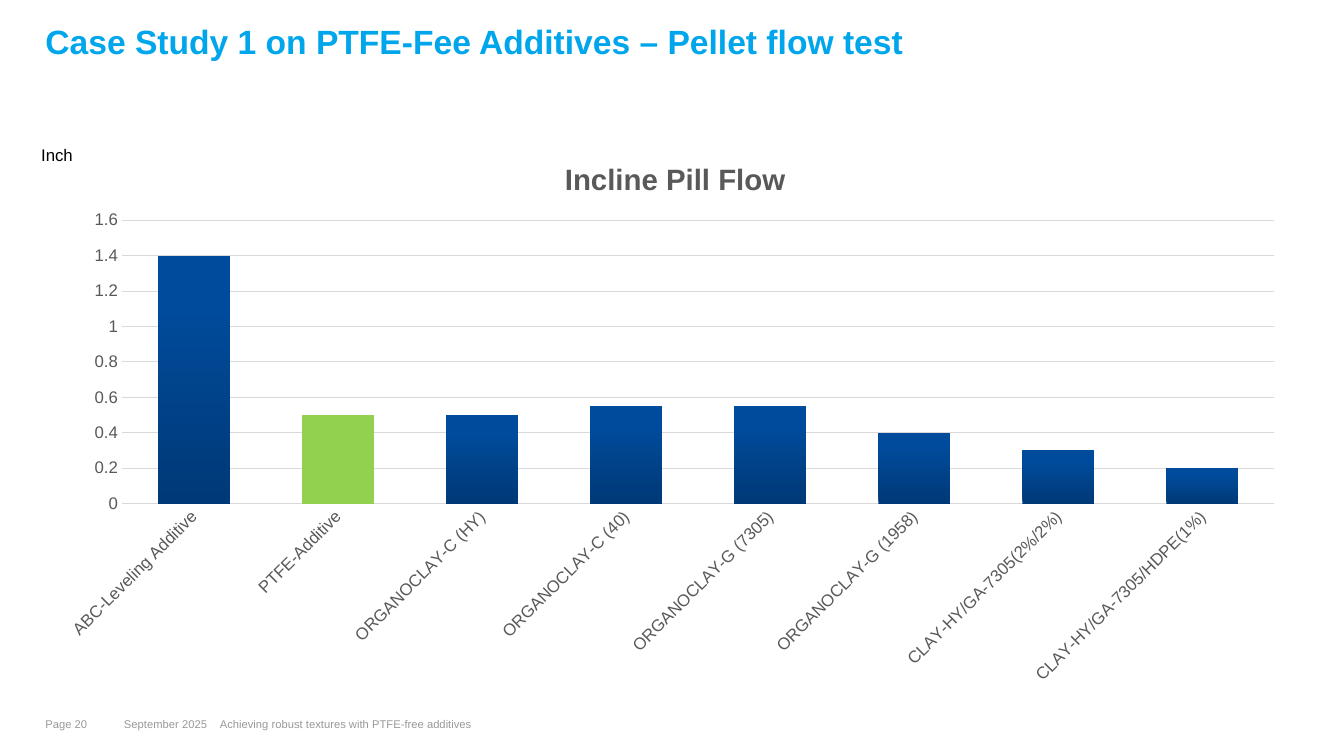
from dataclasses import dataclass

from lxml import etree
from pptx import Presentation
from pptx import util as u
from pptx.chart.data import CategoryChartData
from pptx.dml.color import RGBColor
from pptx.enum import chart as ch
from pptx.enum import text as tx
from pptx.oxml import parse_xml
from pptx.oxml.ns import nsdecls

FONT = "Arial"
BLUE, GRAY, GRID, FOOT = "00A6EB", "595959", "D9D9D9", "999999"
FLOW = {
    "ABC-Leveling Additive": 1.4,
    "PTFE-Additive": 0.5,
    "ORGANOCLAY-C (HY)": 0.5,
    "ORGANOCLAY-C (40)": 0.55,
    "ORGANOCLAY-G (7305)": 0.55,
    "ORGANOCLAY-G (1958)": 0.4,
    "CLAY-HY/GA-7305(2%/2%)": 0.3,
    "CLAY-HY/GA-7305/HDPE(1%)": 0.2,
}


@dataclass
class Label:
    text: str
    left: float
    top: float
    width: float
    height: float
    size: float = 8
    color: str = FOOT
    inset: tuple[float, float] = (0, 0)
    align: tx.PP_ALIGN = tx.PP_ALIGN.LEFT


LABELS = [
    Label("Page 20", 0.45, 7.12, 0.68, 0.16),
    Label("September 2025", 1.23, 7.12, 0.87, 0.16),
    Label("Achieving robust textures with PTFE-free additives", 2.18, 7.12, 8.98, 0.16),
    Label("Inch", 0.17, 1.39, 0.79, 0.3, 12, "000000", (0.1, 0.05), tx.PP_ALIGN.CENTER),
]


def rgb(code: str) -> RGBColor:
    return RGBColor.from_string(code)


def style(font, size: float, color: str, bold: bool = False) -> None:
    font.name, font.size, font.bold = FONT, u.Pt(size), bold
    font.color.rgb = rgb(color)


def place(sp, left: float, top: float, width: float, height: float) -> None:
    sp.left, sp.top = u.Inches(left), u.Inches(top)
    sp.width, sp.height = u.Inches(width), u.Inches(height)


def set_insets(tf, left: float, top: float, right: float, bottom: float) -> None:
    tf.margin_left, tf.margin_top = u.Inches(left), u.Inches(top)
    tf.margin_right, tf.margin_bottom = u.Inches(right), u.Inches(bottom)


def add_title(s, title: str) -> None:
    sp = s.shapes.title
    place(sp, 0.45, 0.21, 12.44, 0.89)
    tf = sp.text_frame
    tf.word_wrap, tf.auto_size = True, tx.MSO_AUTO_SIZE.NONE
    tf.vertical_anchor = tx.MSO_ANCHOR.TOP
    set_insets(tf, 0, 0.04, 0, 0)
    p = tf.paragraphs[0]
    p.alignment, p.line_spacing = tx.PP_ALIGN.LEFT, 0.9
    r = p.add_run()
    r.text = title
    style(r.font, 24, BLUE, True)


def add_label(s, label: Label) -> None:
    sp = s.shapes.add_textbox(0, 0, 0, 0)
    place(sp, label.left, label.top, label.width, label.height)
    tf = sp.text_frame
    tf.word_wrap = True
    side, end = label.inset
    set_insets(tf, side, end, side, end)
    p = tf.paragraphs[0]
    p.alignment = label.align
    r = p.add_run()
    r.text = label.text
    style(r.font, label.size, label.color)


def layout_xml(inner: bool = False, **fractions: float) -> etree.ElementBase:
    """Manual chart layout, in fractions of the chart's size."""
    target = '<c:layoutTarget val="inner"/>' if inner else ""
    modes = '<c:xMode val="edge"/><c:yMode val="edge"/>'
    sizes = "".join(f'<c:{k} val="{v}"/>' for k, v in fractions.items())
    return parse_xml(f'<c:layout {nsdecls("c")}><c:manualLayout>{target}{modes}{sizes}'
                     "</c:manualLayout></c:layout>")


def replace_layout(parent, layout, after: str | None = None) -> None:
    for old in parent.xpath("./c:layout"):
        parent.remove(old)
    if after:
        parent.xpath(f"./{after}")[0].addnext(layout)
    else:
        parent.insert(0, layout)


def add_flow_chart(s) -> None:
    data = CategoryChartData()
    data.categories = list(FLOW)
    data.add_series("Series 1", list(FLOW.values()))
    frame = s.shapes.add_chart(ch.XL_CHART_TYPE.COLUMN_CLUSTERED, u.Inches(0.45),
                               u.Inches(1.32), u.Inches(12.44), u.Inches(5.58), data)
    chart = frame.chart
    style(chart.font, 10, "000000")
    chart.has_legend = False

    # Chart title
    chart.has_title = True
    r = chart.chart_title.text_frame.paragraphs[0].add_run()
    r.text = "Incline Pill Flow"
    style(r.font, 21, GRAY, True)
    chart.chart_title.include_in_layout = False

    # Axes
    cat, val = chart.category_axis, chart.value_axis
    for axis in (cat, val):
        axis.major_tick_mark = axis.minor_tick_mark = ch.XL_TICK_MARK.NONE
        style(axis.tick_labels.font, 12, GRAY)
    cat.format.line.color.rgb = rgb(GRID)
    cat.format.line.width = u.Pt(1)
    val.format.line.fill.background()
    val.minimum_scale, val.maximum_scale, val.major_unit = 0, 1.6, 0.2
    val.tick_labels.number_format = "General"
    val.tick_labels.number_format_is_linked = False
    val.major_gridlines.format.line.color.rgb = rgb(GRID)
    val.major_gridlines.format.line.width = u.Pt(0.75)

    # Columns: blue gradient, with the PTFE reference in green
    plot = chart.plots[0]
    plot.gap_width, plot.overlap, plot.vary_by_categories = 100, -24, False
    series = plot.series[0]
    fill = series.format.fill
    fill.gradient()
    fill.gradient_angle = 90
    for stop, (position, color) in zip(fill.gradient_stops, [(0, "003977"), (0.8, "004B9B")]):
        stop.position, stop.color.rgb = position, rgb(color)
    ptfe = series.points[1].format.fill
    ptfe.solid()
    ptfe.fore_color.rgb = rgb("92D050")

    # Slanted category labels and fixed layout
    root = chart.element
    body = root.xpath(".//c:catAx/c:txPr/a:bodyPr")[0]
    body.set("rot", "-2700000")
    body.set("vert", "horz")
    replace_layout(root.xpath(".//c:chart/c:title")[0], layout_xml(x=0.41, y=0.04), "c:tx")
    replace_layout(root.xpath(".//c:plotArea")[0],
                   layout_xml(True, x=0.061, y=0.155, w=0.919, h=0.504))


def main() -> None:
    prs = Presentation()
    prs.slide_width, prs.slide_height = u.Inches(13.33), u.Inches(7.5)
    s = prs.slides.add_slide(prs.slide_layouts[5])
    add_title(s, "Case Study 1 on PTFE-Fee Additives – Pellet flow test")
    add_flow_chart(s)
    for label in LABELS:
        add_label(s, label)
    prs.save("out.pptx")


if __name__ == "__main__":
    main()
